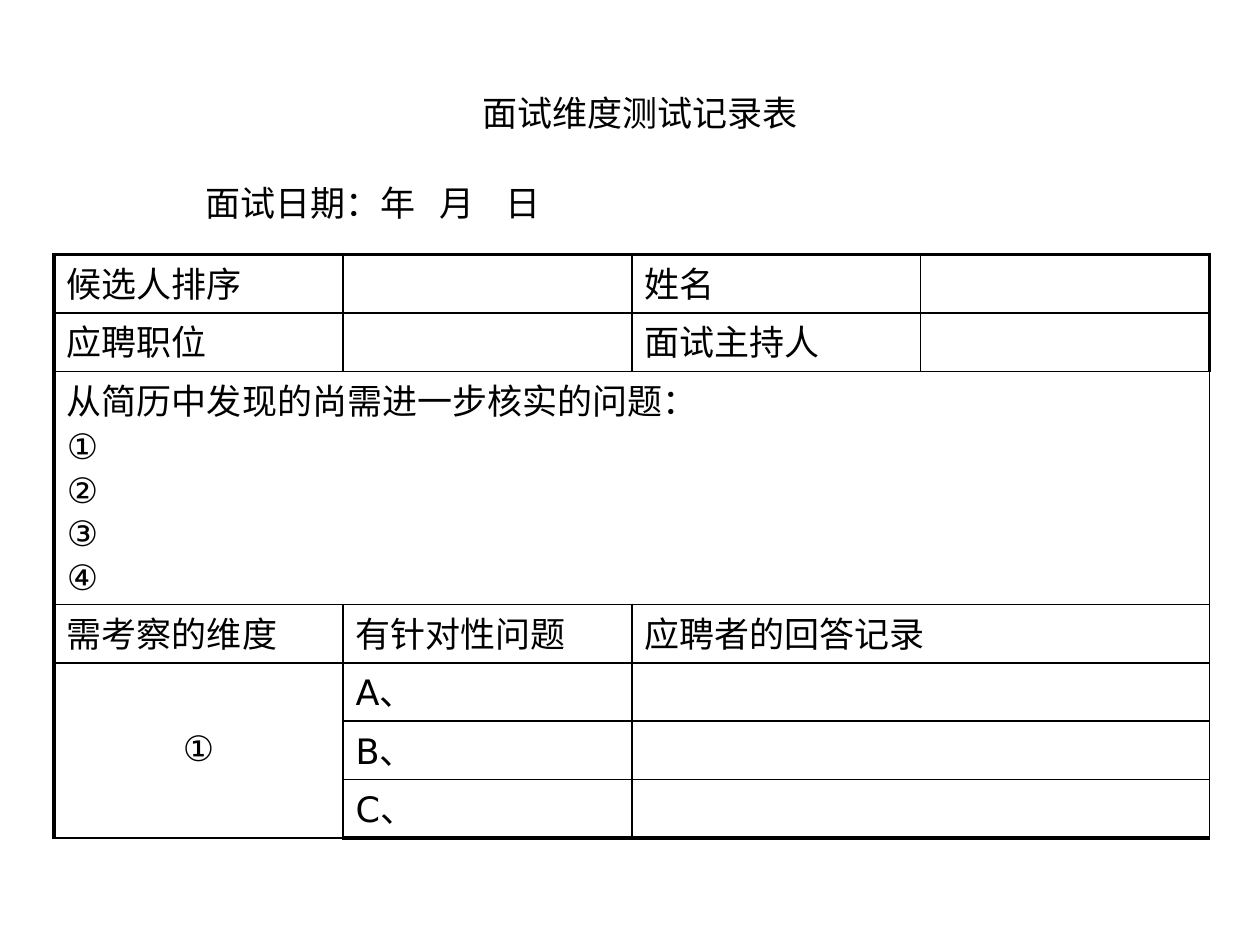
from lxml.etree import SubElement
from pptx import Presentation
from pptx.dml.color import RGBColor
from pptx.enum.text import MSO_ANCHOR, MSO_AUTO_SIZE, PP_ALIGN
from pptx.oxml.ns import qn
from pptx.util import Inches, Pt

INK = "000000"


def style(para, face):
    for run in para.runs:
        run.font.name = face
        run.font.size = Pt(20)
        run.font.color.rgb = RGBColor.from_string(INK)


def edge(cell, side, width):
    line = SubElement(cell._tc.get_or_add_tcPr(), qn("a:ln" + side), w=str(Pt(width)))
    fill = SubElement(line, qn("a:solidFill"))
    SubElement(fill, qn("a:srgbClr"), val=INK)


deck = Presentation()
deck.slide_width, deck.slide_height = Inches(10), Inches(7.5)
slide = deck.slides.add_slide(deck.slide_layouts[5])

# Heading and interview date
title = slide.shapes.title
title.left, title.top = Inches(1.38), Inches(0.68)
title.width, title.height = Inches(7.25), Inches(1.17)
frame = title.text_frame
frame.word_wrap = True
frame.auto_size = MSO_AUTO_SIZE.NONE
frame.vertical_anchor = MSO_ANCHOR.TOP
frame.text = "面试维度测试记录表\n面试日期：年   月    日"
for para, align, gap in zip(frame.paragraphs, (PP_ALIGN.CENTER, PP_ALIGN.LEFT), (4, 27)):
    para.alignment = align
    para.space_before = Pt(gap)
    props = para._p.get_or_add_pPr()
    props.set("marL", str(Inches(0.11)))
    props.set("indent", str(Inches(0.04)))
    style(para, "Calibri")

# Record table
rows = [
    ["候选人排序", "", "姓名", ""],
    ["应聘职位", "", "面试主持人", ""],
    ["从简历中发现的尚需进一步核实的问题：\n①\n②\n③\n④", "", "", ""],
    ["需考察的维度", "有针对性问题", "应聘者的回答记录", ""],
    ["①", "A、", "", ""],
    ["", "B、", "", ""],
    ["", "C、", "", ""],
]
high, wide = len(rows), len(rows[0])
shape = slide.shapes.add_table(
    high, wide, Inches(0.43), Inches(2.02), Inches(9.17), Inches(4.61))
table = shape.table
table.first_row = table.horz_banding = False
for col in table.columns:
    col.width = Inches(9.17 / wide)
for row in table.rows:
    row.height = Inches(0.46)
table.rows[2].height = Inches(1.85)

# Text, borders and fill: thick outside, thin inside
for r, texts in enumerate(rows):
    for c, text in enumerate(texts):
        cell = table.cell(r, c)
        for side, outer in (("L", c == 0), ("R", c == wide - 1),
                            ("T", r == 0), ("B", r == high - 1)):
            edge(cell, side, 2.25 if outer else 1)
        cell.fill.background()
        if text:
            cell.text_frame.text = text
            for para in cell.text_frame.paragraphs:
                para.line_spacing = 0.9
                para.space_before = Pt(4)
                style(para, "DejaVu Sans")

# Merged cells
table.cell(2, 0).merge(table.cell(2, 3))
for r in range(3, high):
    table.cell(r, 2).merge(table.cell(r, 3))
point = table.cell(4, 0)
point.merge(table.cell(6, 0))
point.vertical_anchor = MSO_ANCHOR.MIDDLE
point.text_frame.paragraphs[0].alignment = PP_ALIGN.CENTER

deck.save("out.pptx")
